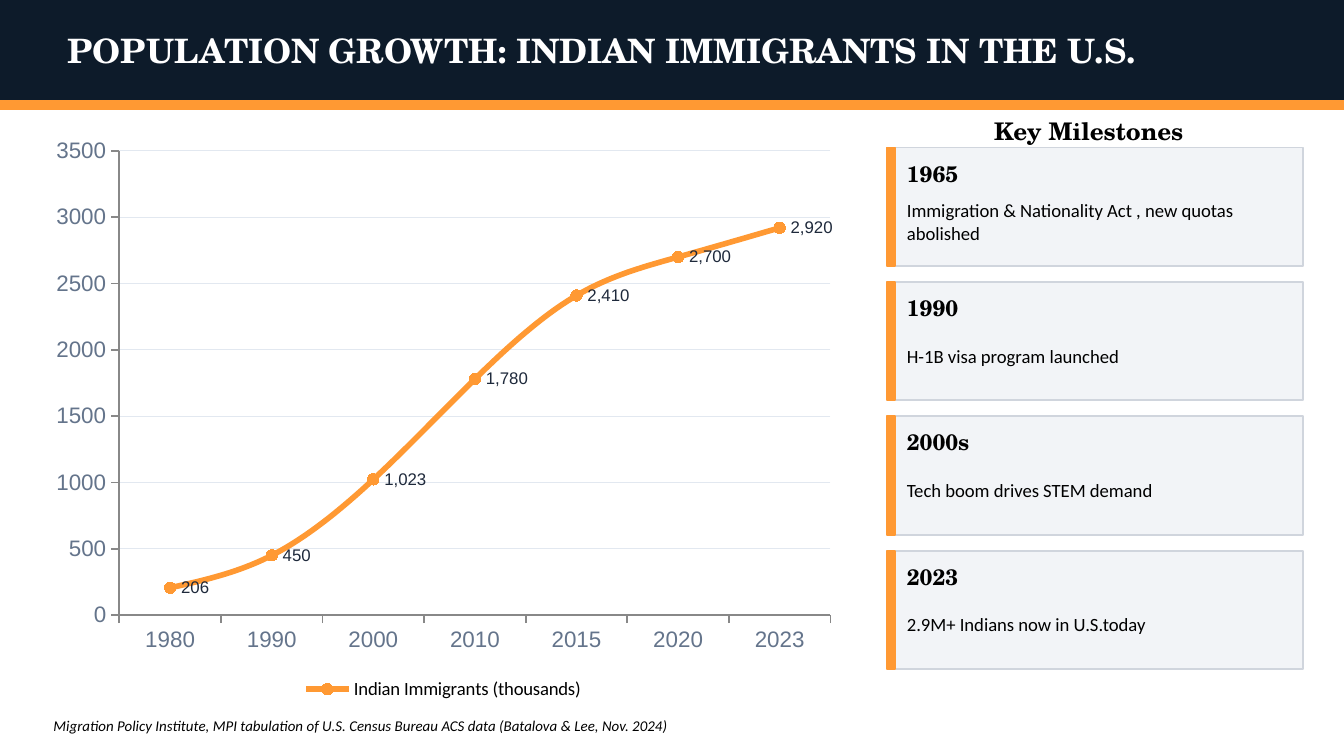
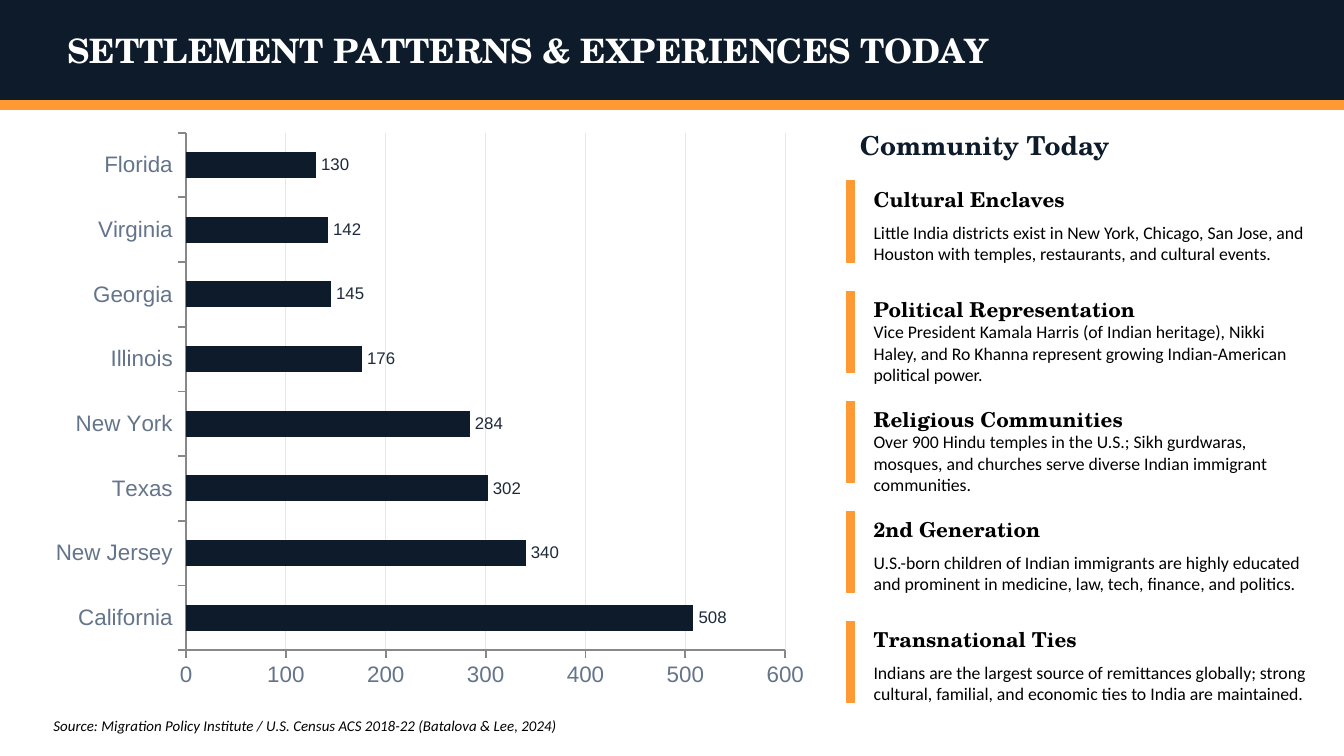
"""Build two slides on Indian immigration to the United States."""
from pptx import Presentation
from pptx.chart.data import CategoryChartData
from pptx.dml.color import RGBColor
from pptx.enum.chart import (XL_CHART_TYPE, XL_LABEL_POSITION, XL_LEGEND_POSITION,
                             XL_MARKER_STYLE, XL_TICK_LABEL_POSITION, XL_TICK_MARK)
from pptx.enum.shapes import MSO_SHAPE
from pptx.enum.text import MSO_ANCHOR, MSO_AUTO_SIZE, PP_ALIGN
from pptx.oxml import parse_xml
from pptx.oxml.ns import nsdecls, qn
from pptx.util import Cm, Pt

RECTANGLE = MSO_SHAPE.RECTANGLE
MIDDLE = MSO_ANCHOR.MIDDLE
NO_AUTOFIT = MSO_AUTO_SIZE.NONE
LEFT = PP_ALIGN.LEFT
LINE_CHART, BAR_CHART = XL_CHART_TYPE.LINE_MARKERS, XL_CHART_TYPE.BAR_CLUSTERED
LABEL_RIGHT, LABEL_OUTSIDE = XL_LABEL_POSITION.RIGHT, XL_LABEL_POSITION.OUTSIDE_END
LEGEND_BOTTOM = XL_LEGEND_POSITION.BOTTOM
CIRCLE = XL_MARKER_STYLE.CIRCLE
TICK_LABELS_LOW = XL_TICK_LABEL_POSITION.LOW
TICK_OUTSIDE, TICK_NONE = XL_TICK_MARK.OUTSIDE, XL_TICK_MARK.NONE

NAVY = RGBColor(0x0D, 0x1B, 0x2A)
SAFFRON = RGBColor(0xFF, 0x99, 0x33)
WHITE = RGBColor(0xFF, 0xFF, 0xFF)
BLACK = RGBColor(0x00, 0x00, 0x00)
CARD_FILL = RGBColor(0xF2, 0xF4, 0xF7)
CARD_LINE = RGBColor(0xD0, 0xD5, 0xDD)
AXIS_TEXT = RGBColor(0x64, 0x74, 0x8B)
AXIS_LINE = RGBColor(0x88, 0x88, 0x88)
GRID_LINE = RGBColor(0xE2, 0xE8, 0xF0)
LABEL_TEXT = RGBColor(0x1E, 0x29, 0x3B)

SERIF, SANS, CHART_SANS = "TeX Gyre Schola", "Calibri", "Arial"


def font_format(name, size, color=BLACK, **extra):
    """Return the values of one text style."""
    return {"name": name, "size": Pt(size), "color": color, **extra}


TITLE_FONT = font_format(SERIF, 18, WHITE, bold=True)
MILESTONES_FONT = font_format(SERIF, 13, bold=True)
COMMUNITY_FONT = font_format(SERIF, 14, NAVY, bold=True)
YEAR_FONT = font_format(SERIF, 12, bold=True)
EVENT_FONT = font_format(SANS, 10)
TOPIC_FONT = font_format(SERIF, 11, bold=True)
DETAIL_FONT = font_format(SANS, 9.5)
SOURCE_FONT = font_format(SANS, 8, italic=True)
CHART_FONT = font_format(SANS, 10)
AXIS_FONT = font_format(CHART_SANS, 12, AXIS_TEXT)
LABEL_FONT = font_format(CHART_SANS, 9, LABEL_TEXT)

SLIDE_WIDTH, SLIDE_HEIGHT = 25.4, 14.29
BAND_HEIGHT, ACCENT_SIZE = 1.91, 0.15

GROWTH = {
    "title": "POPULATION GROWTH: INDIAN IMMIGRANTS IN THE U.S.",
    "heading": "Key Milestones",
    "source": "Migration Policy Institute, MPI tabulation of U.S. Census Bureau ACS data "
              "(Batalova & Lee, Nov. 2024)",
    "series": "Indian Immigrants (thousands)",
    "data": [("1980", 206), ("1990", 450), ("2000", 1023), ("2010", 1780),
             ("2015", 2410), ("2020", 2700), ("2023", 2920)],
    "entries": [
        ("1965", "Immigration & Nationality Act , new quotas abolished"),
        ("1990", "H-1B visa program launched"),
        ("2000s", "Tech boom drives STEM demand"),
        ("2023", "2.9M+ Indians now in U.S.today"),
    ],
}
SETTLEMENT = {
    "title": "SETTLEMENT PATTERNS & EXPERIENCES TODAY",
    "heading": "Community Today",
    "source": "Source: Migration Policy Institute / U.S. Census ACS 2018-22 "
              "(Batalova & Lee, 2024)",
    "series": "Series 1",
    "data": [("California", 508), ("New Jersey", 340), ("Texas", 302), ("New York", 284),
             ("Illinois", 176), ("Georgia", 145), ("Virginia", 142), ("Florida", 130)],
    "entries": [
        ("Cultural Enclaves",
         "Little India districts exist in New York, Chicago, San Jose, and Houston with "
         "temples, restaurants, and cultural events."),
        ("Political Representation",
         "Vice President Kamala Harris (of Indian heritage), Nikki Haley, and Ro Khanna "
         "represent growing Indian-American political power."),
        ("Religious Communities",
         "Over 900 Hindu temples in the U.S.; Sikh gurdwaras, mosques, and churches serve "
         "diverse Indian immigrant communities."),
        ("2nd Generation",
         "U.S.-born children of Indian immigrants are highly educated and prominent in "
         "medicine, law, tech, finance, and politics."),
        ("Transnational Ties",
         "Indians are the largest source of remittances globally; strong cultural, "
         "familial, and economic ties to India are maintained."),
    ],
}


def apply_font(font, values):
    """Set the font attributes from a dict of values."""
    for attribute, value in values.items():
        if attribute == "color":
            font.color.rgb = value
        else:
            setattr(font, attribute, value)


def draw_line(line, color, width):
    """Set a solid line colour and width."""
    line.color.rgb = color
    line.width = Pt(width)


def add_box(slide, position, fill, line=None):
    """Add a flat rectangle, outlined in its own colour by default."""
    shape = slide.shapes.add_shape(RECTANGLE, *map(Cm, position))
    shape.shadow.inherit = False
    shape.fill.solid()
    shape.fill.fore_color.rgb = fill
    draw_line(shape.line, line or fill, 1)
    return shape


def write_text(shape, text, font, inset=True):
    """Fill a text shape with one left-aligned, vertically centred paragraph."""
    frame = shape.text_frame
    frame.text = text
    values = {"word_wrap": True, "auto_size": NO_AUTOFIT, "vertical_anchor": MIDDLE}
    if not inset:
        values.update(dict.fromkeys(
            ("margin_left", "margin_top", "margin_right", "margin_bottom"), 0))
    for attribute, value in values.items():
        setattr(frame, attribute, value)
    paragraph = frame.paragraphs[0]
    paragraph.alignment = LEFT
    apply_font(paragraph.runs[0].font, font)


def add_text(slide, position, text, font, inset=True):
    """Add a text box."""
    write_text(slide.shapes.add_textbox(*map(Cm, position)), text, font, inset)


def add_content_slide(presentation, content, source_width):
    """Add a slide with the title band, accent stripe and source line."""
    slide = presentation.slides.add_slide(presentation.slide_layouts[5])
    title = slide.shapes.title
    title.left, title.top, title.width, title.height = map(Cm, (1.02, 0, 23.37, BAND_HEIGHT))
    write_text(title, content["title"], TITLE_FONT)
    band = add_box(slide, (0, 0, SLIDE_WIDTH, BAND_HEIGHT), NAVY)
    title.element.addprevious(band.element)
    add_box(slide, (0, BAND_HEIGHT, SLIDE_WIDTH, ACCENT_SIZE), SAFFRON)
    add_text(slide, (0.76, 13.46, source_width, 0.51), content["source"], SOURCE_FONT)
    return slide


def add_styled_chart(slide, content, chart_type, position, maximum, step, label_position):
    """Add a chart with the shared axes, grid and data labels."""
    data = CategoryChartData()
    data.categories = [category for category, _ in content["data"]]
    data.add_series(content["series"], [value for _, value in content["data"]])
    chart = slide.shapes.add_chart(chart_type, *map(Cm, position), data).chart
    chart.has_title = chart.has_legend = False
    apply_font(chart.font, CHART_FONT)
    chart.element.find(qn("c:chart")).addnext(parse_xml(
        f'<c:spPr {nsdecls("c", "a")}><a:solidFill><a:srgbClr val="{WHITE}"/></a:solidFill>'
        '<a:ln><a:noFill/></a:ln></c:spPr>'))
    for axis in (chart.category_axis, chart.value_axis):
        axis.major_tick_mark, axis.minor_tick_mark = TICK_OUTSIDE, TICK_NONE
        axis.has_major_gridlines = False
        apply_font(axis.tick_labels.font, AXIS_FONT)
        draw_line(axis.format.line, AXIS_LINE, 1)
    value_axis = chart.value_axis
    value_axis.minimum_scale, value_axis.maximum_scale = 0, maximum
    value_axis.major_unit = step
    value_axis.has_major_gridlines = True
    draw_line(value_axis.major_gridlines.format.line, GRID_LINE, 0.5)
    plot = chart.plots[0]
    plot.vary_by_categories = False
    labels = plot.series[0].data_labels
    labels.show_value = True
    labels.number_format, labels.number_format_is_linked = "#,##0", False
    labels.position = label_position
    apply_font(labels.font, LABEL_FONT)
    return chart


def add_growth_chart(slide):
    """Add the smoothed line chart of population by year."""
    chart = add_styled_chart(slide, GROWTH, LINE_CHART, (0.76, 2.41, 15.24, 10.92),
                             3500, 500, LABEL_RIGHT)
    chart.category_axis.tick_label_position = TICK_LABELS_LOW
    chart.has_legend = True
    chart.legend.position = LEGEND_BOTTOM
    chart.legend.include_in_layout = False
    apply_font(chart.legend.font, CHART_FONT)
    series = chart.plots[0].series[0]
    series.smooth = True
    draw_line(series.format.line, SAFFRON, 3)
    marker = series.marker
    marker.style, marker.size = CIRCLE, 6
    marker.format.fill.solid()
    marker.format.fill.fore_color.rgb = SAFFRON
    marker.format.line.color.rgb = SAFFRON


def add_state_chart(slide):
    """Add the bar chart of population by state."""
    chart = add_styled_chart(slide, SETTLEMENT, BAR_CHART, (0.76, 2.29, 14.73, 10.92),
                             600, 100, LABEL_OUTSIDE)
    chart.value_axis.tick_label_position = TICK_LABELS_LOW
    plot = chart.plots[0]
    plot.gap_width = 150
    fill = plot.series[0].format.fill
    fill.solid()
    fill.fore_color.rgb = NAVY


def add_milestones(slide):
    """Add the heading and one card per milestone."""
    add_text(slide, (18.54, 2.03, 6.86, 0.89), GROWTH["heading"], MILESTONES_FONT)
    left, first_top, step, height = 16.76, 2.79, 2.54, 2.24
    for index, (year, event) in enumerate(GROWTH["entries"]):
        top = first_top + index * step
        add_box(slide, (left, top, 7.87, height), CARD_FILL, CARD_LINE)
        add_box(slide, (left, top, ACCENT_SIZE, height), SAFFRON)
        add_text(slide, (left + 0.38, top + 0.13, 2.03, 0.71), year, YEAR_FONT, False)
        add_text(slide, (left + 0.38, top + 0.76, 7.24, 1.27), event, EVENT_FONT, False)


def add_community_topics(slide):
    """Add the heading and one accented entry per topic."""
    left, first_top, step = 16, 3.43, 2.08
    add_text(slide, (left, 2.29, 8.76, 0.89), SETTLEMENT["heading"], COMMUNITY_FONT)
    for index, (topic, detail) in enumerate(SETTLEMENT["entries"]):
        top = first_top + index * step
        add_box(slide, (left, top, ACCENT_SIZE, 1.52), SAFFRON)
        add_text(slide, (left + 0.51, top, 8.26, 0.66), topic, TOPIC_FONT, False)
        add_text(slide, (left + 0.51, top + 0.71, 8.26, 0.91), detail, DETAIL_FONT, False)


def main():
    """Build and save the presentation."""
    presentation = Presentation()
    presentation.slide_width, presentation.slide_height = Cm(SLIDE_WIDTH), Cm(SLIDE_HEIGHT)
    growth_slide = add_content_slide(presentation, GROWTH, 23.88)
    add_growth_chart(growth_slide)
    add_milestones(growth_slide)
    settlement_slide = add_content_slide(presentation, SETTLEMENT, 14.73)
    add_state_chart(settlement_slide)
    add_community_topics(settlement_slide)
    presentation.save("out.pptx")


if __name__ == "__main__":
    main()
